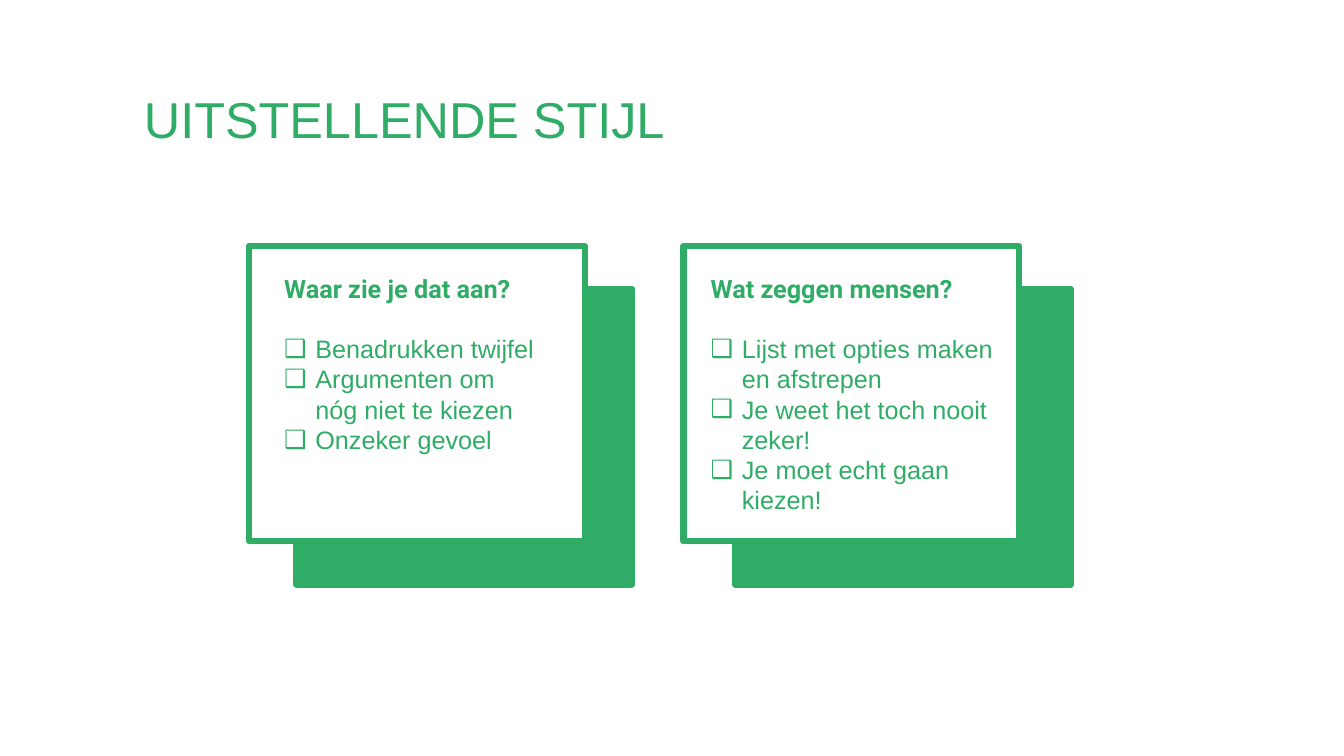
"""Build the slide "UITSTELLENDE STIJL" with two framed checklist cards."""
from lxml.etree import SubElement
from pptx import Presentation
from pptx.dml.color import RGBColor
from pptx.enum.shapes import MSO_SHAPE as Preset
from pptx.oxml.ns import qn
from pptx.util import Pt

GREEN = RGBColor(0x2F, 0xAC, 0x66)
WHITE = RGBColor(0xFF, 0xFF, 0xFF)
PX = 9144
SLIDE_SIZE = (1333, 750)
CARD_SIZE = (333, 293)
FRAME_TOP, SHADE_TOP, TEXT_TOP, TEXT_HEIGHT = 244, 287, 266, 252
INDENT = 31
LINE_PITCH = Pt(21.6)

TITLE = "UITSTELLENDE STIJL"
TITLE_AT = (133, 82, 1123, 71)
TITLE_FONT = {"name": "Arial", "size": Pt(36)}
HEADING_FONT = {"name": "Roboto", "size": Pt(18), "bold": True}
ITEM_FONT = {"name": "Arial", "size": Pt(18), "bold": False}
CARDS = [
    {"frame": 247, "shade": 294, "text": 272, "width": 276,
     "heading": "Waar zie je dat aan?",
     "items": ["Benadrukken twijfel", "Argumenten om nóg niet te kiezen",
               "Onzeker gevoel"]},
    {"frame": 678, "shade": 729, "text": 695, "width": 305,
     "heading": "Wat zeggen mensen?",
     "items": ["Lijst met opties maken en afstrepen",
               "Je weet het toch nooit zeker!", "Je moet echt gaan kiezen!"]},
]


def add_panel(page, left, top, fill):
    """Add one green-edged rectangle."""
    panel = page.shapes.add_shape(
        Preset.RECTANGLE, *(n * PX for n in (left, top, *CARD_SIZE)))
    panel.shadow.inherit = False
    panel.fill.solid()
    panel.fill.fore_color.rgb = fill
    panel.line.color.rgb = GREEN
    panel.line.width = Pt(4.5)


def add_text_frame(page, *at):
    """Add a wrapping text box and return its text frame."""
    frame = page.shapes.add_textbox(*(n * PX for n in at)).text_frame
    frame.word_wrap = True
    return frame


def write(para, text, font):
    """Put one green run in a paragraph."""
    span = para.add_run()
    span.text = text
    for name, value in font.items():
        setattr(span.font, name, value)
    span.font.color.rgb = GREEN


def add_checkbox(para):
    """Give a paragraph a hanging checkbox bullet."""
    props = para._p.get_or_add_pPr()
    props.set("marL", str(INDENT * PX))
    props.set("indent", str(-INDENT * PX))
    SubElement(props, qn("a:buFont"), typeface="Arial")
    SubElement(props, qn("a:buChar"), char="❑")


def add_card_text(page, card):
    """Write a card's heading and its checklist."""
    frame = add_text_frame(
        page, card["text"], TEXT_TOP, card["width"], TEXT_HEIGHT)
    heading = frame.paragraphs[0]
    heading.line_spacing = LINE_PITCH
    write(heading, card["heading"], HEADING_FONT)
    for index, item in enumerate(card["items"]):
        para = frame.add_paragraph()
        add_checkbox(para)
        para.line_spacing = LINE_PITCH
        if index == 0:
            para.space_before = LINE_PITCH
        write(para, item, ITEM_FONT)


def main():
    """Assemble and save the deck."""
    deck = Presentation()
    deck.slide_width, deck.slide_height = (n * PX for n in SLIDE_SIZE)
    page = deck.slides.add_slide(deck.slide_layouts[6])
    for card in CARDS:
        add_panel(page, card["shade"], SHADE_TOP, GREEN)
        add_panel(page, card["frame"], FRAME_TOP, WHITE)
        add_card_text(page, card)
    title = add_text_frame(page, *TITLE_AT)
    write(title.paragraphs[0], TITLE, TITLE_FONT)
    deck.save("out.pptx")


if __name__ == "__main__":
    main()
